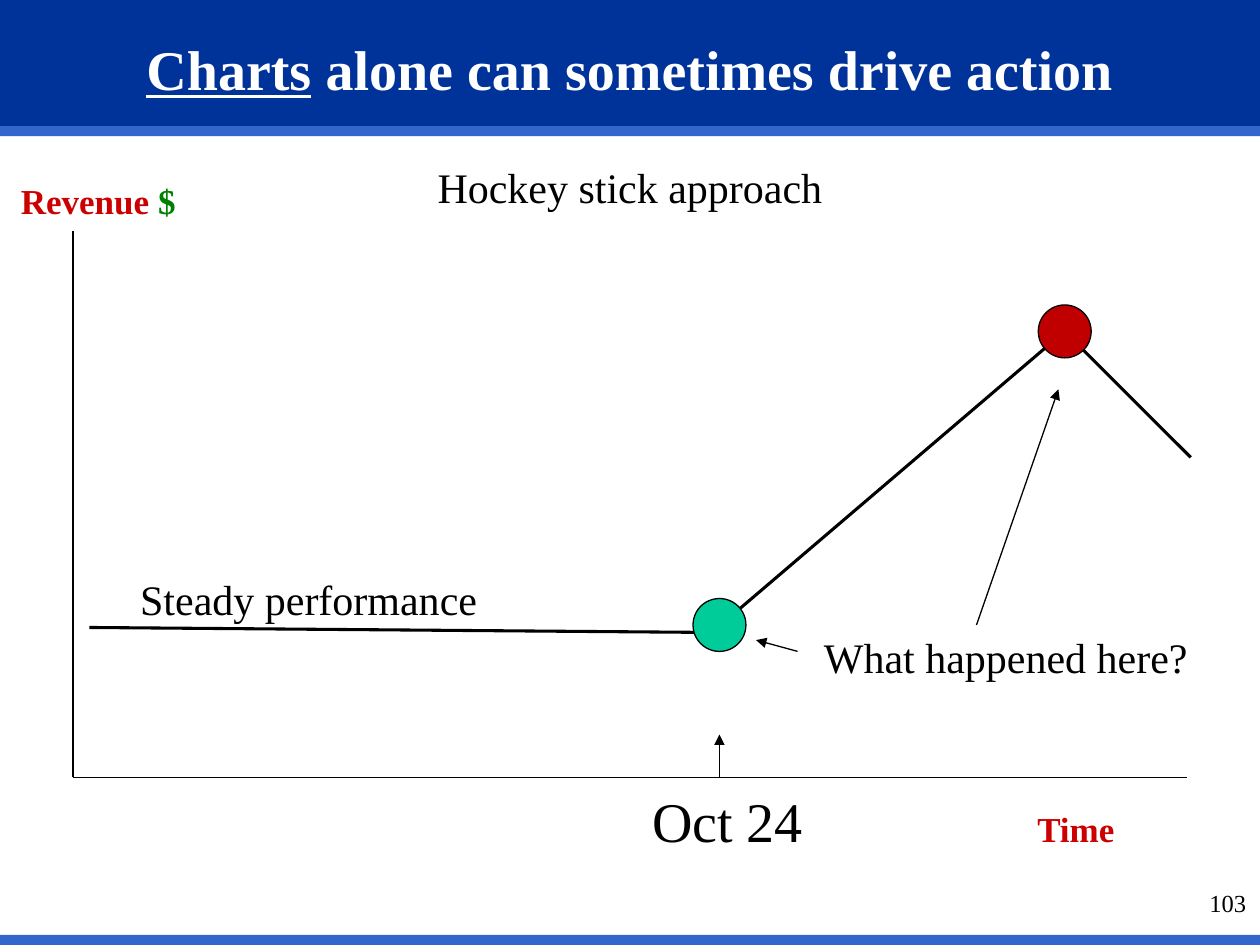
from lxml import etree
from pptx import Presentation
from pptx.dml.color import RGBColor
from pptx.enum.shapes import MSO_CONNECTOR, MSO_SHAPE
from pptx.enum.text import MSO_ANCHOR, PP_ALIGN
from pptx.oxml.ns import qn
from pptx.util import Inches, Pt

RECT, OVAL = MSO_SHAPE.RECTANGLE, MSO_SHAPE.OVAL
STRAIGHT = MSO_CONNECTOR.STRAIGHT
LEFT, CENTER = PP_ALIGN.LEFT, PP_ALIGN.CENTER
TOP, MIDDLE = MSO_ANCHOR.TOP, MSO_ANCHOR.MIDDLE
FONT = "Times New Roman"
THIN, THICK = 0.75, 1.75
DOT = 0.42
COLORS = {
    "navy": "003399",
    "blue": "3366CC",
    "white": "FFFFFF",
    "black": "000000",
    "label": "CC0000",
    "dollar": "008000",
    "peak": "C00000",
    "start": "00CC99",
}


def rgb(name):
    """Return the named colour."""
    return RGBColor.from_string(COLORS[name])


def add_block(s, kind, box, fill, outline=None):
    """Add a filled preset shape, outlined if a colour is given."""
    sp = s.shapes.add_shape(kind, *map(Inches, box))
    sp.shadow.inherit = False
    sp.fill.solid()
    sp.fill.fore_color.rgb = rgb(fill)
    if outline:
        sp.line.color.rgb = rgb(outline)
        sp.line.width = Pt(THIN)
    else:
        sp.line.fill.background()


def add_dot(s, x, y, fill):
    """Add a round marker centred on a point."""
    add_block(s, OVAL, (x - DOT / 2, y - DOT / 2, DOT, DOT), fill, "black")


def add_line(s, start, end, width=THIN, arrow=False):
    """Add a straight black line, with an arrowhead at its end if wanted."""
    cx = s.shapes.add_connector(STRAIGHT, *map(Inches, start + end))
    cx.line.color.rgb = rgb("black")
    cx.line.width = Pt(width)
    if arrow:
        ln = cx.line._get_or_add_ln()
        etree.SubElement(ln, qn("a:tailEnd"), type="triangle")
    etree.SubElement(cx._element.spPr, qn("a:effectLst"))


def add_text(s, box, runs, align=CENTER, anchor=TOP, wrap=False):
    """Add one paragraph made of (text, size, colour, format) runs."""
    tf = s.shapes.add_textbox(*map(Inches, box)).text_frame
    tf.word_wrap = wrap
    tf.vertical_anchor = anchor
    p = tf.paragraphs[0]
    p.alignment = align
    for text, size, color, fmt in runs:
        r = p.add_run()
        r.text = text
        r.font.color.rgb = rgb(color)
        for name, value in {"name": FONT, "size": Pt(size), **fmt}.items():
            setattr(r.font, name, value)


def add_frame(s):
    """Add the title band, the stripes, the title and the page number."""
    add_block(s, RECT, (0, 0, 10, 1), "navy")
    for y in (1, 7.42):
        add_block(s, RECT, (0, y, 10, 0.08), "blue")
    bold = {"bold": True}
    title = [
        ("Charts", 32, "white", {**bold, "underline": True}),
        (" alone can sometimes drive action", 32, "white", bold),
    ]
    add_text(s, (0.5, 0.25, 9, 0.58), title, anchor=MIDDLE, wrap=True)
    add_text(s, (9.5, 7, 0.5, 0.4), [("103", 14, "black", {})], align=LEFT)


def add_graph(s):
    """Add the axes, the revenue curve, its markers and the arrows."""
    origin = (0.58, 6.17)
    peak = (8.45, 2.63)
    for end in ((0.58, 1.83), (9.42, 6.17)):
        add_line(s, origin, end)
    curve = [
        ((0.71, 4.98), (5.67, 5.02)),
        ((5.65, 5.02), peak),
        (peak, (9.45, 3.63)),
    ]
    for start, end in curve:
        add_line(s, start, end, THICK)
    add_dot(s, 5.71, 4.96, "start")
    add_dot(s, *peak, "peak")
    arrows = [
        ((6.33, 5.17), (6, 5.08)),
        ((7.75, 4.96), (8.4, 3.09)),
        ((5.71, 6.17), (5.71, 5.83)),
    ]
    for start, end in arrows:
        add_line(s, start, end, arrow=True)


def add_labels(s):
    """Add the axis names and the remarks on the curve."""
    remarks = [
        ("Hockey stick approach", 24, (3.27, 1.23, 3.46, 0.5)),
        ("Steady performance", 24, (1, 4.5, 2.9, 0.5)),
        (" What happened here?", 24, (6.23, 4.96, 3.43, 0.5)),
        ("Oct 24", 32, (5.07, 6.19, 1.41, 0.64)),
    ]
    for text, size, box in remarks:
        add_text(s, box, [(text, size, "black", {})])
    bold = {"bold": True}
    space = (" ", 32, "black", {})
    revenue = [("Revenue ", 20, "label", bold), ("$", 20, "dollar", bold), space]
    add_text(s, (0.06, 1.21, 1.55, 0.64), revenue)
    add_text(s, (8.13, 6.19, 0.93, 0.64), [("Time", 20, "label", bold), space])


def main():
    """Build the slide and save it."""
    prs = Presentation()
    prs.slide_width, prs.slide_height = Inches(10), Inches(7.5)
    s = prs.slides.add_slide(prs.slide_layouts[6])
    add_frame(s)
    add_graph(s)
    add_labels(s)
    prs.save("out.pptx")


if __name__ == "__main__":
    main()
